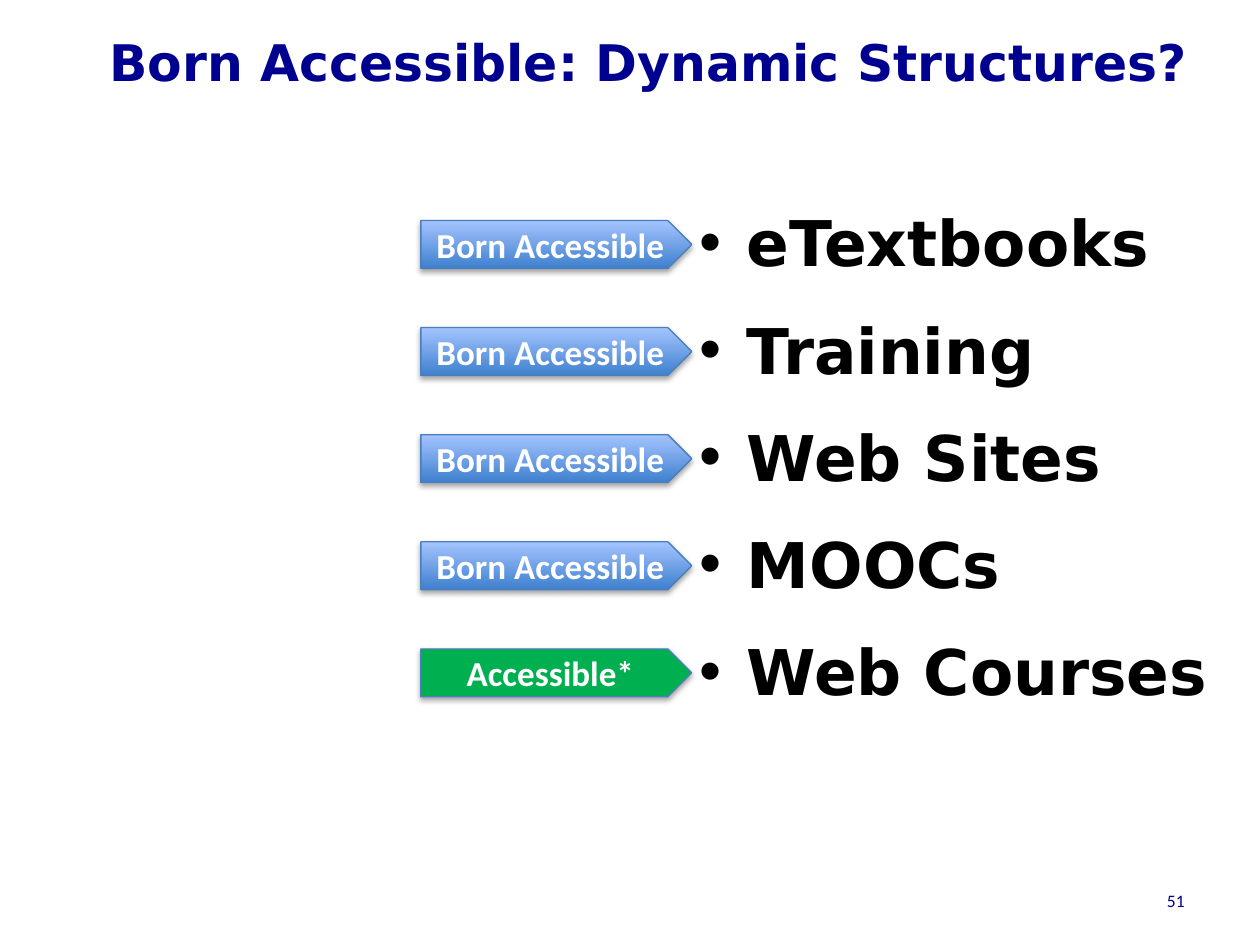
from lxml.etree import SubElement as Sub
from pptx import Presentation
from pptx.dml.color import RGBColor as Rgb
from pptx.enum.shapes import MSO_SHAPE as Shape
from pptx.enum.text import MSO_ANCHOR as Anchor, PP_ALIGN as Align
from pptx.oxml.ns import qn
from pptx.util import Inches, Pt

HUES = {
    "navy": "000090", "black": "000000", "white": "FFFFFF",
    "deep": "3F80CE", "pale": "A4C4FF", "edge": "4B7EBC", "green": "00B050",
}
ROWS = [
    ("Born Accessible", "eTextbooks"),
    ("Born Accessible", "Training"),
    ("Born Accessible", "Web Sites"),
    ("Born Accessible", "MOOCs"),
    ("Accessible*", "Web Courses"),
]
PITCH = 0.85


def hue(name):
    return Rgb.from_string(HUES[name])


def write(para, text, size, color, font="Calibri", bold=False, align=Align.LEFT):
    para.alignment = align
    run = para.add_run()
    run.text = text
    run.font.size = Pt(size)
    run.font.name = font
    run.font.bold = bold
    run.font.color.rgb = hue(color)


def frame(slide, box, anchor=Anchor.MIDDLE):
    text = slide.shapes.add_textbox(*map(Inches, box)).text_frame
    text.word_wrap = True
    text.vertical_anchor = anchor
    return text


def title(slide, box):
    write(frame(slide, box).paragraphs[0], "Born Accessible: Dynamic Structures?",
          size=28.8, color="navy", font="DejaVu Sans", bold=True)


def number(slide, box):
    write(frame(slide, box).paragraphs[0], "51", size=10, color="navy",
          align=Align.RIGHT)


def bullet(para):
    props = para._p.get_or_add_pPr()
    props.set("marL", str(Inches(0.38)))
    props.set("indent", str(-Inches(0.38)))
    Sub(props, qn("a:buFont"), typeface="Arial")
    Sub(props, qn("a:buChar"), char="•")


def topics(slide, box):
    text = frame(slide, box, Anchor.TOP)
    for i, (_, name) in enumerate(ROWS):
        para = text.add_paragraph() if i else text.paragraphs[0]
        bullet(para)
        para.space_after = Pt(18)
        write(para, name, size=36, color="black", font="DejaVu Sans", bold=True)


def shade(shape):
    shape.shadow.inherit = False
    effects = shape._element.spPr.find(qn("a:effectLst"))
    outer = Sub(effects, qn("a:outerShdw"), blurRad=str(Pt(3.1)),
                dist=str(Pt(1.8)), dir="5400000", rotWithShape="0")
    color = Sub(outer, qn("a:srgbClr"), val=HUES["black"])
    Sub(color, qn("a:alpha"), val="35000")


def tag(slide, box, label):
    shape = slide.shapes.add_shape(Shape.PENTAGON, *map(Inches, box))
    if label == "Accessible*":
        shape.fill.solid()
        shape.fill.fore_color.rgb = hue("green")
    else:
        shape.fill.gradient()
        shape.fill.gradient_angle = 90
        for stop, name in zip(shape.fill.gradient_stops, ("deep", "pale")):
            stop.color.rgb = hue(name)
    shape.line.color.rgb = hue("edge")
    shape.line.width = Pt(0.75)
    shade(shape)
    shape.text_frame.vertical_anchor = Anchor.MIDDLE
    write(shape.text_frame.paragraphs[0], label, size=20, color="white",
          bold=True, align=Align.CENTER)


def tags(slide, box):
    left, top, width, height = box
    for i, (label, _) in enumerate(ROWS):
        tag(slide, (left, top + i * PITCH, width, height), label)


def main():
    deck = Presentation()
    deck.slide_width, deck.slide_height = Inches(10), Inches(7.5)
    slide = deck.slides.add_slide(deck.slide_layouts[6])
    topics(slide, (5.45, 1.57, 4.31, 5.34))
    number(slide, (7.17, 6.95, 2.33, 0.4))
    title(slide, (0.77, 0.03, 9.23, 0.92))
    tags(slide, (3.34, 1.75, 2.15, 0.38))
    deck.save("out.pptx")


if __name__ == "__main__":
    main()
